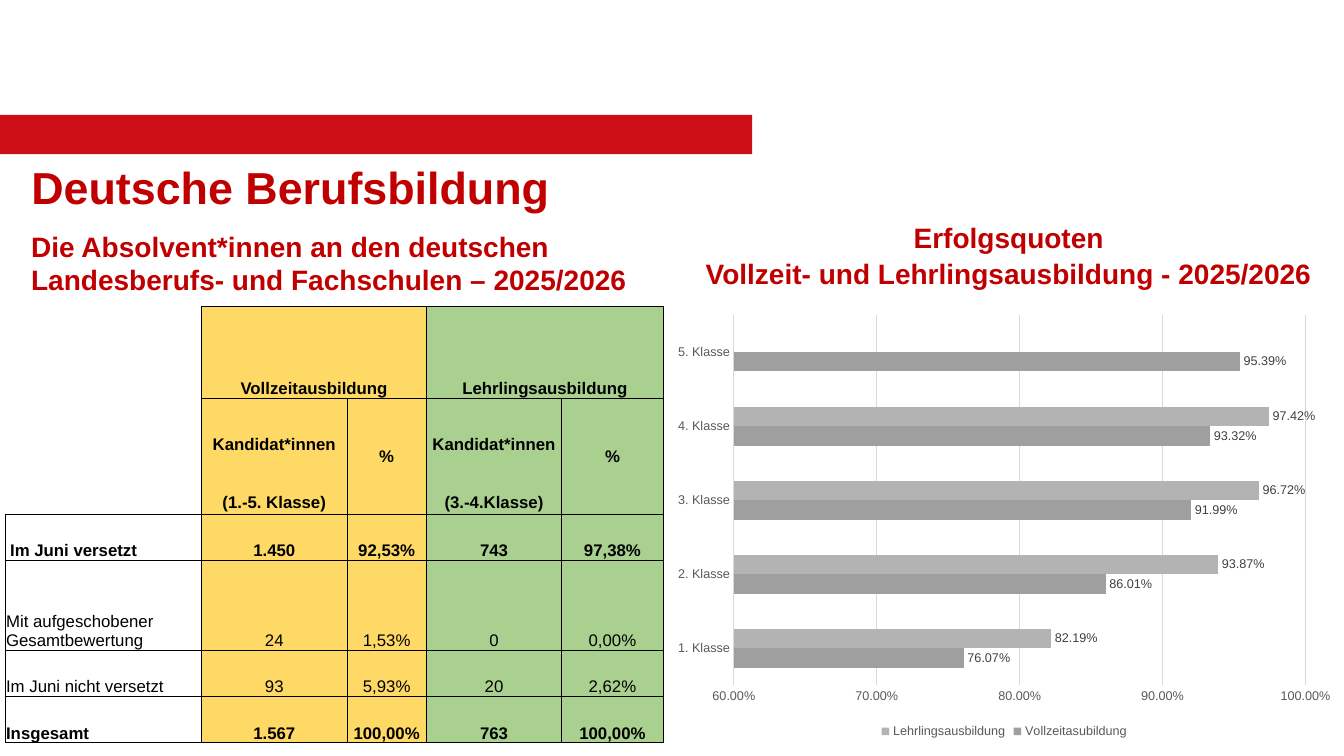
"""Build the slide on German vocational training: graduates table and success rates."""
from dataclasses import dataclass
from typing import NamedTuple

from lxml import etree
from pptx import Presentation
from pptx import util as u
from pptx.chart import data as cd
from pptx.dml.color import RGBColor
from pptx.enum import chart as ch, shapes, text
from pptx.oxml import ns

WIDE, HIGH = u.Inches(13.33), u.Inches(7.5)


@dataclass(frozen=True)
class Theme:
    """Colours, font and type sizes of the slide."""
    face: str = "Arial"
    red: str = "C00000"
    bar: str = "CD0E16"
    gold: str = "FFD966"
    green: str = "A9D08E"
    black: str = "000000"
    axis: str = "595959"
    label: str = "404040"
    grid: str = "D9D9D9"
    title: float = 32
    head: float = 20
    cell: float = 12
    chart: float = 9


class Area(NamedTuple):
    """A place on the slide in per cent of its width and height."""
    x: float
    y: float
    w: float
    h: float

    def box(self) -> tuple:
        """Return left, top, width and height in slide units."""
        return across(self.x), down(self.y), across(self.w), down(self.h)


class Head(NamedTuple):
    """A red heading above one half of the slide."""
    area: Area
    words: str
    align: text.PP_ALIGN
    space: float


class Series(NamedTuple):
    """One row of bars in the chart."""
    name: str
    rates: tuple
    color: str


THEME = Theme()
HEADS = (
    Head(Area(1.58, 32.13, 46.89, 5.2),
         "Die Absolvent*innen an den deutschen Landesberufs- und Fachschulen – 2025/2026",
         text.PP_ALIGN.LEFT, 1),
    Head(Area(51.61, 31.07, 46.89, 5.2),
         "Erfolgsquoten\nVollzeit- und Lehrlingsausbildung - 2025/2026",
         text.PP_ALIGN.CENTER, 1.07),
)
COLS = (14.63, 10.8, 5.93, 10.05, 7.58)
ROWS = (12.13, 12.13, 3.2, 6.13, 11.87, 6.13, 6.13)
CELLS = (
    ("", "Vollzeitausbildung", "", "Lehrlingsausbildung", ""),
    ("", "Kandidat*innen", "%", "Kandidat*innen", "%"),
    ("", "(1.-5. Klasse)", "", "(3.-4.Klasse)", ""),
    ("Im Juni versetzt", "1.450", "92,53%", "743", "97,38%"),
    ("Mit aufgeschobener Gesamtbewertung", "24", "1,53%", "0", "0,00%"),
    ("Im Juni nicht versetzt", "93", "5,93%", "20", "2,62%"),
    ("Insgesamt", "1.567", "100,00%", "763", "100,00%"),
)
MERGES = ((0, 1, 0, 2), (0, 3, 0, 4), (1, 0, 2, 0), (1, 2, 2, 2), (1, 4, 2, 4))
PLAIN = (4, 5)
SERIES = (
    Series("Vollzeitasubildung", (0.7607, 0.8601, 0.9199, 0.9332, 0.9539), "9F9F9F"),
    Series("Lehrlingsausbildung", (0.8219, 0.9387, 0.9672, 0.9742, None), "B3B3B3"),
)


def across(share: float) -> int:
    """Turn a per cent of the slide's width into a length."""
    return round(WIDE * share / 100)


def down(share: float) -> int:
    """Turn a per cent of the slide's height into a length."""
    return round(HIGH * share / 100)


def style(font, size: float, color: str, bold: bool = False) -> None:
    """Format one font."""
    font.name, font.size, font.bold = THEME.face, u.Pt(size), bold
    font.color.rgb = RGBColor.from_string(color)


def paint(fill, color: str) -> None:
    """Give a fill one solid colour."""
    fill.solid()
    fill.fore_color.rgb = RGBColor.from_string(color)


def write(frame, words: str, size: float, color: str, align, bold: bool = True,
          space: float = 1) -> None:
    """Fill a text frame and format its runs."""
    frame.text = words
    for para in frame.paragraphs:
        para.alignment, para.line_spacing = align, space
        for run in para.runs:
            style(run.font, size, color, bold)


def sides(row: int, col: int) -> str:
    """Name the sides of a cell that carry a line."""
    if col == 0 and row < 3:
        return ("R", "R", "RB")[row]
    return {1: "LRT", 2: "LRB"}.get(row, "LRTB")


def edge(cell, shown: str) -> None:
    """Draw the shown sides of a cell and clear the others."""
    props = cell._tc.get_or_add_tcPr()
    for place, side in enumerate("LRTB"):
        line = etree.Element(ns.qn(f"a:ln{side}"), w=str(u.Pt(0.5)))
        if side in shown:
            solid = etree.SubElement(line, ns.qn("a:solidFill"))
            etree.SubElement(solid, ns.qn("a:srgbClr"), val=THEME.black)
        else:
            etree.SubElement(line, ns.qn("a:noFill"))
        props.insert(place, line)


def add_grid(slide, area: Area) -> None:
    """Add the table of graduates."""
    table = slide.shapes.add_table(len(ROWS), len(COLS), *area.box()).table
    table.first_row = table.horz_banding = False
    for col, share in zip(table.columns, COLS):
        col.width = across(share)
    for row, share in zip(table.rows, ROWS):
        row.height = down(share)
    for r, line in enumerate(CELLS):
        for c, words in enumerate(line):
            cell = table.cell(r, c)
            cell.margin_left = cell.margin_right = cell.margin_top = u.Inches(0.01)
            cell.margin_bottom = 0
            if (r, c) == (3, 0):
                cell.margin_left = u.Inches(0.05)
            middle = r in (1, 2)
            cell.vertical_anchor = text.MSO_ANCHOR.MIDDLE if middle else text.MSO_ANCHOR.BOTTOM
            align = text.PP_ALIGN.CENTER if c else text.PP_ALIGN.LEFT
            write(cell.text_frame, words, THEME.cell, THEME.black, align, r not in PLAIN)
            if not words:
                para = cell.text_frame.paragraphs[0]._p
                etree.SubElement(para, ns.qn("a:endParaRPr"), sz=str(THEME.cell * 100))
            if c:
                paint(cell.fill, THEME.gold if c < 3 else THEME.green)
            else:
                cell.fill.background()
            edge(cell, sides(r, c))
    for top, left, low, right in MERGES:
        table.cell(top, left).merge(table.cell(low, right))


def add_rates(slide, area: Area) -> None:
    """Add the bar chart of success rates."""
    data = cd.CategoryChartData(number_format="0.00%")
    data.categories = [f"{year}. Klasse" for year in range(1, 6)]
    for item in SERIES:
        data.add_series(item.name, item.rates)
    chart = slide.shapes.add_chart(ch.XL_CHART_TYPE.BAR_CLUSTERED, *area.box(), data).chart
    style(chart.font, THEME.chart, THEME.axis)
    chart.has_title = False
    chart.has_legend = True
    chart.legend.position = ch.XL_LEGEND_POSITION.BOTTOM
    chart.legend.include_in_layout = False
    style(chart.legend.font, THEME.chart, THEME.axis)
    names, scale = chart.category_axis, chart.value_axis
    for axis in (names, scale):
        axis.major_tick_mark = axis.minor_tick_mark = ch.XL_TICK_MARK.NONE
        style(axis.tick_labels.font, THEME.chart, THEME.axis)
    scale.minimum_scale, scale.maximum_scale, scale.major_unit = 0.6, 1, 0.1
    scale.tick_labels.number_format = "0.00%"
    scale.tick_labels.number_format_is_linked = False
    scale.has_major_gridlines = True
    scale.format.line.fill.background()
    for line in (names.format.line, scale.major_gridlines.format.line):
        paint(line.fill, THEME.grid)
        line.width = u.Pt(0.75)
    plot = chart.plots[0]
    plot.gap_width, plot.overlap, plot.vary_by_categories = 182, 0, False
    for bars, item in zip(plot.series, SERIES):
        paint(bars.format.fill, item.color)
        tags = bars.data_labels
        tags.show_value = True
        tags.number_format, tags.number_format_is_linked = "0.00%", False
        tags.position = ch.XL_LABEL_POSITION.OUTSIDE_END
        style(tags.font, THEME.chart, THEME.label)


def main() -> None:
    """Build and save the slide."""
    deck = Presentation()
    deck.slide_width, deck.slide_height = WIDE, HIGH
    slide = deck.slides.add_slide(deck.slide_layouts[5])
    bar = slide.shapes.add_shape(shapes.MSO_SHAPE.RECTANGLE, *Area(0, 15.2, 55.96, 5.2).box())
    bar.shadow.inherit = False
    paint(bar.fill, THEME.bar)
    bar.line.fill.background()
    title = slide.shapes.title
    title.left, title.top, title.width, title.height = Area(1.58, 21.6, 43.14, 6.27).box()
    title.text_frame.vertical_anchor = text.MSO_ANCHOR.MIDDLE
    title.text_frame.auto_size = text.MSO_AUTO_SIZE.NONE
    write(title.text_frame, "Deutsche Berufsbildung", THEME.title, THEME.red, text.PP_ALIGN.LEFT)
    for head in HEADS:
        frame = slide.shapes.add_textbox(*head.area.box()).text_frame
        frame.word_wrap, frame.vertical_anchor = True, text.MSO_ANCHOR.MIDDLE
        write(frame, head.words, THEME.head, THEME.red, head.align, space=head.space)
    add_grid(slide, Area(0.38, 40.53, sum(COLS), sum(ROWS)))
    add_rates(slide, Area(49.44, 40.53, 50.56, 57.73))
    deck.save("out.pptx")


if __name__ == "__main__":
    main()
